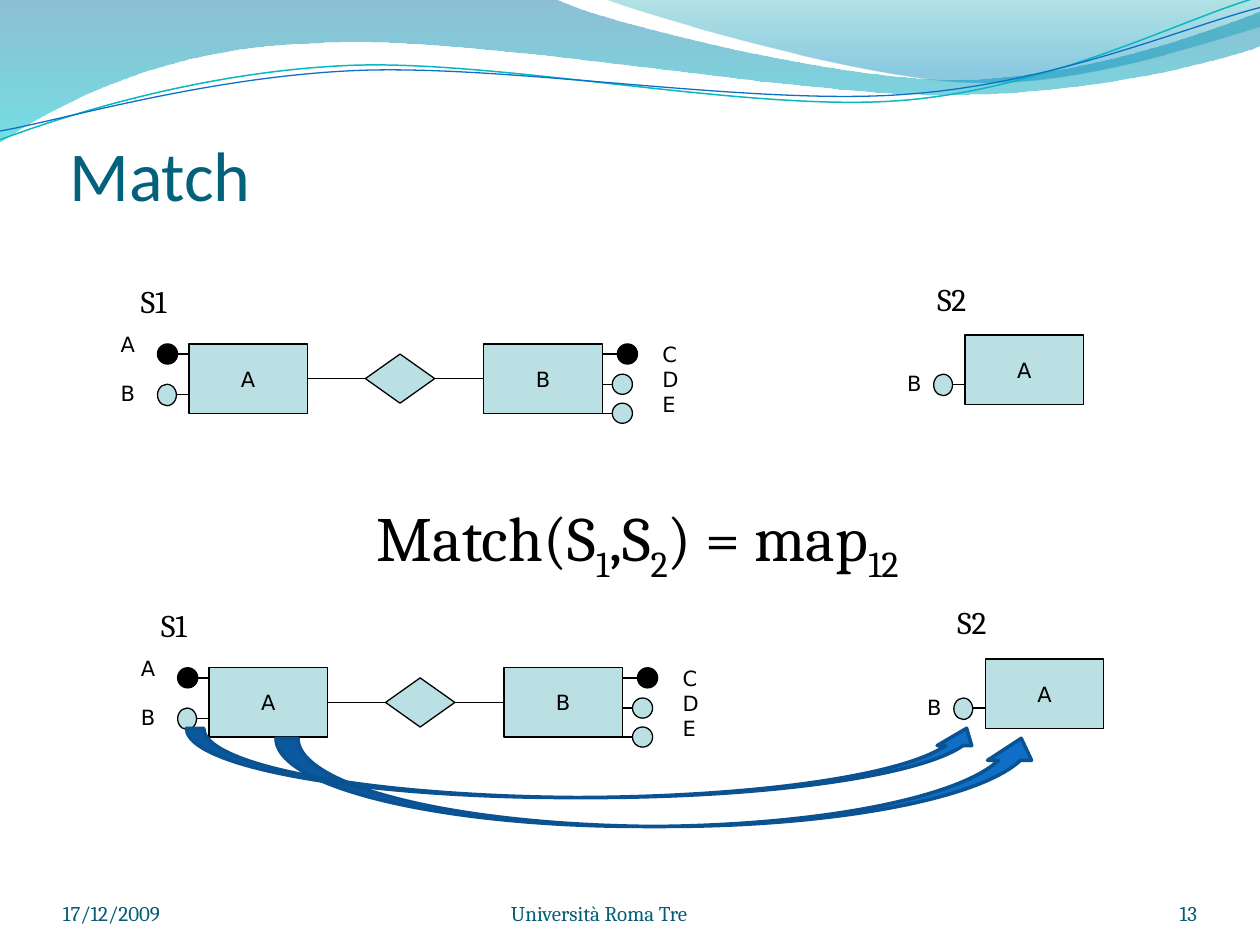
from pptx import Presentation
from pptx.dml.color import RGBColor
from pptx.enum.shapes import MSO_CONNECTOR as Link, MSO_SHAPE as Shape
from pptx.enum.text import MSO_ANCHOR as Anchor, MSO_AUTO_SIZE as Fit, PP_ALIGN as Align
from pptx.oxml.ns import qn
from pptx.util import Inches, Pt
from lxml.etree import SubElement

PALE, BLACK, FOOTER = "BBE0E3", "000000", "045D75"

BAND = [
    [(0, 0)],
    [(4.4, -0.01)],
    [(4.76, 0.17), (6.64, 0.63), (7.58, 0.63)],
    [(8.53, 0.63), (9.58, 0.26), (10, 0.09)],
    [(10.01, 0.36)],
    [(9.83, 0.44), (8.7, 0.76), (7.46, 0.75)],
    [(6.22, 0.75), (3.82, 0.28), (2.57, 0.34)],
    [(1.29, 0.36), (0.46, 0.83), (-0.01, 1.13)],
    [(0, 0)],
]
CORNER = [
    [(4.79, -0.01)],
    [(5.09, 0.11), (6.82, 0.62), (7.69, 0.65)],
    [(8.56, 0.69), (9.61, 0.32), (10, 0.21)],
    [(10, 0)],
    [(4.79, -0.01)],
]
TEAL_WAVE = [
    [(0, 1.11)],
    [(0.48, 0.93), (1.58, 0.57), (2.77, 0.52)],
    [(3.95, 0.47), (5.93, 0.89), (7.13, 0.8)],
    [(8.33, 0.71), (9.38, 0.15), (9.98, -0.02)],
]
BLUE_WAVE = [
    [(0, 1.04)],
    [(0.47, 0.96), (1.64, 0.61), (2.83, 0.56)],
    [(4.03, 0.51), (5.97, 0.84), (7.17, 0.75)],
    [(8.36, 0.67), (9.41, 0.21), (10, 0.06)],
]


def color(code):
    """Turn a hex string into a colour."""
    return RGBColor.from_string(code)


def set_line(item, code, width):
    """Set the line colour and width."""
    item.line.color.rgb = color(code)
    item.line.width = Pt(width)


def add_outline(slide, segments, closed):
    """Draw a freeform whose three-point segments are cubic curves."""
    (start,), *segments = segments
    builder = slide.shapes.build_freeform(*map(Inches, start))
    points = [tuple(map(Inches, point)) for segment in segments for point in segment]
    builder.add_line_segments(points, close=closed)
    outline = builder.convert_to_shape()
    outline.shadow.inherit = False
    nodes = iter(list(outline._element.iter(qn("a:lnTo"))))
    for segment in segments:
        first, *others = [next(nodes) for _ in segment]
        if others:
            first.tag = qn("a:cubicBezTo")
        for node in others:
            first.append(node[0])
            node.getparent().remove(node)
    return outline


def add_band(slide, segments, stops):
    """Draw a filled band with a translucent vertical gradient."""
    band = add_outline(slide, segments, True)
    band.line.fill.background()
    band.fill.gradient()
    band.fill.gradient_angle = 270
    for stop, (position, code, _) in zip(band.fill.gradient_stops, stops):
        stop.position = position
        stop.color.rgb = color(code)
    for node, (_, _, opacity) in zip(band._element.spPr.iter(qn("a:srgbClr")), stops):
        SubElement(node, qn("a:alpha"), val=str(opacity * 1000))


def add_wave(slide, segments, code, width):
    """Draw an open wavy line."""
    wave = add_outline(slide, segments, False)
    wave.fill.background()
    set_line(wave, code, width)


def write(para, text, size=12, font="DejaVu Sans", code=BLACK, baseline=0):
    """Add a formatted span of text to a paragraph."""
    span = para.add_run()
    span.text = text
    span.font.size = Pt(size)
    span.font.name = font
    span.font.color.rgb = color(code)
    if baseline:
        span._r.get_or_add_rPr().set("baseline", str(baseline * 1000))


def add_label(slide, x, y, width, height, lines, gap=0, **style):
    """Add an unwrapped text box with one paragraph per line."""
    box = slide.shapes.add_textbox(Inches(x), Inches(y), Inches(width), Inches(height))
    frame = box.text_frame
    frame.word_wrap = False
    frame.auto_size = Fit.SHAPE_TO_FIT_TEXT
    for index, line in enumerate(lines):
        para = frame.add_paragraph() if index else frame.paragraphs[0]
        if index and gap:
            para.space_before = Pt(gap)
        write(para, line, **style)
    return frame.paragraphs[0]


def add_fixed_text(slide, x, y, width, height, text, align=Align.LEFT, top=0, **style):
    """Add a wrapped text box whose text sits at the bottom."""
    box = slide.shapes.add_textbox(Inches(x), Inches(y), Inches(width), Inches(height))
    frame = box.text_frame
    frame.word_wrap = True
    frame.vertical_anchor = Anchor.BOTTOM
    frame.margin_left = frame.margin_right = frame.margin_bottom = 0
    frame.margin_top = Inches(top)
    frame.paragraphs[0].alignment = align
    write(frame.paragraphs[0], text, **style)


def add_figure(slide, kind, x, y, width, height, fill=PALE, line=BLACK, weight=0.75):
    """Add a filled preset shape."""
    figure = slide.shapes.add_shape(kind, Inches(x), Inches(y), Inches(width), Inches(height))
    figure.shadow.inherit = False
    figure.fill.solid()
    figure.fill.fore_color.rgb = color(fill)
    set_line(figure, line, weight)
    return figure


def add_entity(slide, x, y, name):
    """Add a named entity rectangle."""
    entity = add_figure(slide, Shape.FLOWCHART_PROCESS, x, y, 0.94, 0.55)
    frame = entity.text_frame
    frame.word_wrap = False
    frame.vertical_anchor = Anchor.MIDDLE
    frame.paragraphs[0].alignment = Align.CENTER
    write(frame.paragraphs[0], name)
    return entity


def add_link(slide, x1, y1, x2, y2):
    """Add a thin black straight connector."""
    link = slide.shapes.add_connector(Link.STRAIGHT, Inches(x1), Inches(y1), Inches(x2), Inches(y2))
    set_line(link, BLACK, 0.75)
    SubElement(link._element.spPr, qn("a:effectLst"))
    return link


def add_attribute(slide, x, y, line_x, fill=PALE, width=0.16, height=0.16):
    """Add an attribute circle and the stub that leads to its entity."""
    add_link(slide, line_x, y + 0.08, line_x + 0.43, y + 0.08)
    add_figure(slide, Shape.OVAL, x, y, width, height, fill)


def add_schemas(slide, dx, dy):
    """Draw schemas S1 and S2, moved by dx and dy."""
    add_attribute(slide, dx + 1.25, dy + 2.73, dx + 1.34, BLACK)
    for x, y, line_x in ((1.25, 3.05, 1.33), (7.41, 2.97, 7.49)):
        add_attribute(slide, dx + x, dy + y, dx + line_x, width=0.15, height=0.17)
    for x, y, fill in ((4.9, 2.73, BLACK), (4.86, 2.97, PALE), (4.86, 3.2, PALE)):
        add_attribute(slide, dx + x, dy + y, dx + 4.47, fill)

    left = add_entity(slide, dx + 1.5, dy + 2.73, "A")
    right = add_entity(slide, dx + 3.84, dy + 2.73, "B")
    add_entity(slide, dx + 7.66, dy + 2.66, "A")
    relation = add_figure(slide, Shape.DIAMOND, dx + 2.9, dy + 2.81, 0.55, 0.39)
    for start, end in ((relation, left), (right, relation)):
        link = add_link(slide, 0, 0, 1, 1)
        link.begin_connect(start, 1)
        link.end_connect(end, 3)

    add_label(slide, dx + 0.86, dy + 2.58, 0.31, 0.71, ["A", "B"], gap=14)
    add_label(slide, dx + 5.16, dy + 2.66, 0.33, 0.71, ["C", "D", "E"])
    add_label(slide, dx + 7.1, dy + 2.89, 0.31, 0.31, ["B"])
    add_label(slide, dx + 1.02, dy + 2.19, 0.41, 0.4, ["S1"], size=18, font="Cambria")
    add_label(slide, dx + 7.34, dy + 2.17, 0.45, 0.4, ["S2"], size=18, font="Cambria")


def add_formula(slide):
    """Write the match formula with its subscripts."""
    style = {"size": 36, "font": "Cambria"}
    para = add_label(slide, 2.89, 3.91, 4.64, 0.71, ["Match(S"], **style)
    for text, baseline in (("1", -25), (",S", 0), ("2", -25), (") = map", 0), ("12", -25)):
        write(para, text, baseline=baseline, **style)


def main():
    """Build and save the slide."""
    deck = Presentation()
    deck.slide_width, deck.slide_height = Inches(10), Inches(7.5)
    slide = deck.slides.add_slide(deck.slide_layouts[6])

    add_band(slide, BAND, [(0, "0074A1", 45), (1, "00C6CF", 55)])
    add_band(slide, CORNER, [(0, "00A1A9", 30), (0.8, "008BBF", 45)])
    add_wave(slide, TEAL_WAVE, "0AB8BF", 0.85)
    add_wave(slide, BLUE_WAVE, "0F6FC6", 0.75)

    add_fixed_text(slide, 0.55, 0.86, 9, 0.85, "Match", top=0.05,
                   size=40, font="Calibri", code="04617B")
    for x, width, text, align in ((0.5, 2.33, "17/12/2009", Align.LEFT),
                                  (2.92, 3.67, "Università Roma Tre", Align.CENTER),
                                  (8.67, 0.83, "13", Align.RIGHT)):
        add_fixed_text(slide, x, 6.95, width, 0.4, text, align, font="Cambria", code=FOOTER)

    add_schemas(slide, 0, 0)
    add_formula(slide)
    add_schemas(slide, 0.16, 2.57)
    for x, y, width, height in ((2.19, 5.86, 6.09, 0.7), (1.48, 5.78, 6.33, 0.55)):
        add_figure(slide, Shape.CURVED_UP_ARROW, x, y, width, height, "0F6FC6", "0B5292", 2)

    deck.save("out.pptx")


if __name__ == "__main__":
    main()
